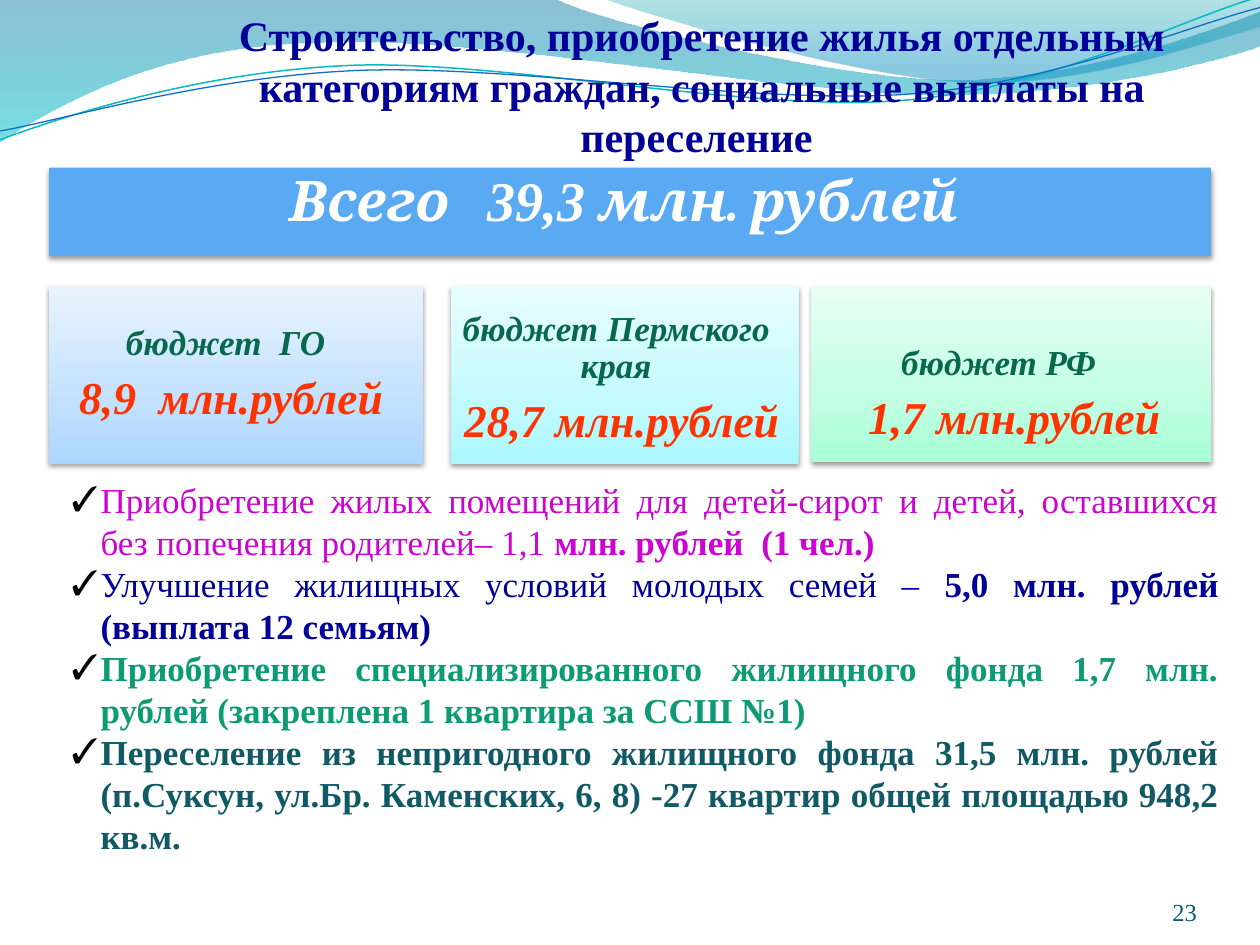
"""Housing budget slide: a total, three budget sources and four spending lines."""
from lxml import etree
from pptx import Presentation, util as u
from pptx.dml.color import RGBColor as Rgb
from pptx.enum import shapes as sh, text as tx
from pptx.oxml.ns import qn

NAVY, WHITE, BLACK = Rgb(0, 0, 0x99), Rgb(255, 255, 255), Rgb(0, 0, 0)
BLUE, PINE, RED = Rgb(0x59, 0xAA, 0xF2), Rgb(0x08, 0x68, 0x4E), Rgb(0xFF, 0x33, 0)
PINK, GREEN = Rgb(0xCC, 0x04, 0xD1), Rgb(0x0C, 0x9B, 0x74)
SLATE, PAGE = Rgb(0x11, 0x59, 0x64), Rgb(0x04, 0x5D, 0x75)
TEAL, SEA = Rgb(0x0A, 0xB8, 0xBF), Rgb(0x0F, 0x6F, 0xC6)
SERIF = "Times New Roman"
LEFT, WIDE, ROW, TALL = 0.39, 9.22, 2.27, 1.41

TITLE = "Строительство, приобретение жилья отдельным категориям граждан, социальные выплаты на переселение "
TOTAL = [("Всего", {"face": "Cambria"}), (" ", {"face": "Cambria", "gap": 14}),
         ("39,3", {}), (" млн. рублей ", {"face": "Cambria"})]
CARDS = [
    {"x": 0.39, "w": 2.97, "h": TALL, "stops": ("ABD6FF", "C3E1FF", "E8F3FF"),
     "box": (0.39, ROW, 2.8, TALL), "lead": 0.09,
     "name": [("бюджет", {}), (" ", {"gap": 5}), ("ГО", {})],
     "sum": [("8,9", {}), (" ", {"gap": 6.5}), ("млн.рублей", {})]},
    {"x": 3.58, "w": 2.76, "h": TALL, "stops": ("ABF8FF", "C3FAFF", "E8FDFF"),
     "box": (3.44, ROW, 2.9, 1.48), "lead": 0.09,
     "name": [("бюджет Пермского края", {})], "sum": [("28,7 млн.рублей", {})]},
    {"x": 6.44, "w": 3.17, "h": 1.4, "stops": ("A6FFD7", "C0FFE2", "E7FFF4"),
     "box": (6.47, 2.66, 2.98, 0.95), "lead": 0.18, "top": True,
     "name": [("бюджет РФ ", {})], "sum": [("1,7 млн.рублей", {})]},
]
BOLD = {"bold": True}
ITEMS = [
    (PINK, [("Приобретение жилых помещений для детей-сирот и детей, оставшихся без попечения родителей– 1,1 ", {}),
            ("млн. рублей", BOLD), (" ", {"bold": True, "gap": 5}), ("(1 чел.)", BOLD)]),
    (NAVY, [("Улучшение жилищных условий молодых семей –", {}),
            (" 5,0 млн. рублей (выплата 12 семьям)", BOLD)]),
    (GREEN, [("Приобретение специализированного жилищного фонда 1,7 млн. рублей "
              "(закреплена 1 квартира за ССШ №1)", BOLD)]),
    (SLATE, [("Переселение из непригодного жилищного фонда 31,5 млн. рублей "
              "(п.Суксун, ул.Бр. Каменских, 6, 8) -27 квартир общей площадью 948,2 кв.м.", BOLD)]),
]
WAVES = [
    {"path": [(0, -0.01), (4.4, -0.01), (4.76, 0.17, 6.64, 0.63, 7.58, 0.63),
              (8.53, 0.63, 9.58, 0.26, 10, 0.09), (10.01, 0.36),
              (9.83, 0.44, 8.7, 0.76, 7.46, 0.75), (6.22, 0.75, 3.82, 0.28, 2.57, 0.34),
              (1.29, 0.35, 0.46, 0.83, -0.01, 1.13), (0, -0.01)],
     "stops": [(0, "0074A1", 45), (100, "00C6CF", 55)]},
    {"path": [(4.79, -0.01), (5.09, 0.11, 6.82, 0.62, 7.69, 0.65),
              (8.56, 0.69, 9.61, 0.32, 10, 0.21), (10, 0), (4.79, -0.01)],
     "stops": [(0, "00A1A9", 30), (80, "008BBF", 45)]},
    {"path": [(0, 1.11), (0.48, 0.93, 1.58, 0.57, 2.77, 0.52),
              (3.95, 0.47, 5.93, 0.89, 7.13, 0.8), (8.33, 0.71, 9.38, 0.15, 9.98, -0.02)],
     "line": (TEAL, 0.85)},
    {"path": [(0, 1.04), (0.47, 0.96, 1.64, 0.61, 2.83, 0.56),
              (4.03, 0.51, 5.97, 0.83, 7.17, 0.75), (8.36, 0.67, 9.41, 0.21, 10, 0.06)],
     "line": (SEA, 0.75)},
]

prs = Presentation()
prs.slide_width, prs.slide_height = u.Inches(10), u.Inches(7.5)
page = prs.slides.add_slide(prs.slide_layouts[6]).shapes


def node(dad, tag, **attrs):
    return etree.SubElement(dad, qn(tag), {k: str(v) for k, v in attrs.items()})


def tint(dad, code, alpha):
    node(node(dad, "a:srgbClr", val=code), "a:alpha", val=alpha * 1000)


def grade(shape, stops, angle):
    shape.fill.background()
    old = shape._element.spPr.find(qn("a:noFill"))
    grad = etree.Element(qn("a:gradFill"), rotWithShape="1")
    old.getparent().replace(old, grad)
    row = node(grad, "a:gsLst")
    for pos, code, alpha in stops:
        tint(node(row, "a:gs", pos=pos * 1000), code, alpha)
    node(grad, "a:lin", ang=angle * 60000, scaled=0)


def bend(shape, path):
    x0, y0 = (min(leg[-2 + a] for leg in path) for a in (0, 1))
    legs = list(shape._element.spPr.iter(qn("a:lnTo")))
    for line, leg in zip(legs, path[1:]):
        if len(leg) == 6:
            curve = etree.Element(qn("a:cubicBezTo"))
            for x, y in zip(leg[::2], leg[1::2]):
                node(curve, "a:pt", x=round((x - x0) * 1000), y=round((y - y0) * 1000))
            line.getparent().replace(line, curve)


def wave(path, stops=None, line=None):
    dots = [(leg[-2] * 1000, leg[-1] * 1000) for leg in path]
    pen = page.build_freeform(*dots[0], scale=914.4)
    pen.add_line_segments(dots[1:], close=bool(stops))
    shape = pen.convert_to_shape()
    bend(shape, path)
    shape.shadow.inherit = False
    if stops:
        grade(shape, stops, 90)
        shape.line.fill.background()
    else:
        shape.fill.background()
        shape.line.color.rgb, shape.line.width = line[0], u.Pt(line[1])


def panel(x, y, w, h):
    shape = page.add_shape(sh.MSO_SHAPE.RECTANGLE, *map(u.Inches, (x, y, w, h)))
    shape.line.fill.background()
    shape.shadow.inherit = False
    glow = node(shape._element.spPr.find(qn("a:effectLst")), "a:outerShdw",
                blurRad=u.Pt(3.1), dist=u.Pt(1.6), dir=5400000, rotWithShape=0)
    tint(glow, "000000", 38)
    return shape


def frame(x, y, w, h, pad=None, anchor=tx.MSO_ANCHOR.TOP):
    body = page.add_textbox(*map(u.Inches, (x, y, w, h))).text_frame
    body.word_wrap, body.vertical_anchor = True, anchor
    if pad is not None:
        body.margin_left = body.margin_right = u.Inches(pad)
        body.margin_top = body.margin_bottom = u.Inches(pad)
    return body


def write(body, runs, size, color, bold=False, italic=False, align=tx.PP_ALIGN.CENTER,
          lead=0, mark=None, tight=False):
    para = body.paragraphs[0]
    if para.runs:
        para = body.add_paragraph()
    para.alignment = align
    if tight:
        para.line_spacing, para.space_after = 0.9, u.Pt(round(size * 0.35))
    props = para._p.get_or_add_pPr()
    if lead:
        props.set("marL", str(u.Inches(lead)))
    if mark:
        props.set("indent", str(-u.Inches(lead)))
        node(node(props, "a:buClr"), "a:srgbClr", val=BLACK)
        node(props, "a:buFont", typeface=SERIF)
        node(props, "a:buChar", char=mark)
    for words, look in runs:
        run = para.add_run()
        run.text, font = words, run.font
        font.name, font.size = look.get("face", SERIF), u.Pt(size)
        font.bold, font.italic = look.get("bold", bold), italic
        font.color.rgb = color
        if "gap" in look:
            run._r.get_or_add_rPr().set("spc", str(int(look["gap"] * 100)))


for item in WAVES:
    wave(**item)

write(frame(8.67, 6.95, 0.83, 0.4, 0, tx.MSO_ANCHOR.BOTTOM), [("23", {})], 14, PAGE,
      align=tx.PP_ALIGN.RIGHT)

bar = panel(LEFT, 1.33, WIDE, 0.7)
bar.fill.solid()
bar.fill.fore_color.rgb = BLUE
write(frame(LEFT, 1.33, WIDE, 0.57, 0.13, tx.MSO_ANCHOR.MIDDLE), TOTAL, 32, WHITE,
      bold=True, italic=True, tight=True)

for card in CARDS:
    back = panel(card["x"], ROW, card["w"], card["h"])
    grade(back, [(p, c, 100) for p, c in zip((0, 35, 100), card["stops"])], 270)
    spot = tx.MSO_ANCHOR.TOP if card.get("top") else tx.MSO_ANCHOR.MIDDLE
    body = frame(*card["box"], 0.08, spot)
    write(body, card["name"], 20, PINE, bold=True, italic=True, tight=True)
    write(body, card["sum"], 26, RED, bold=True, italic=True, tight=True, lead=card["lead"])

body = frame(0.47, 3.75, 9.3, 3.77)
for color, runs in ITEMS:
    write(body, runs, 20, color, align=tx.PP_ALIGN.JUSTIFY, lead=0.23, mark="✓")

write(frame(1.61, 0.03, 7.92, 1.31), [(TITLE, {})], 24, NAVY, bold=True)

prs.save("out.pptx")
